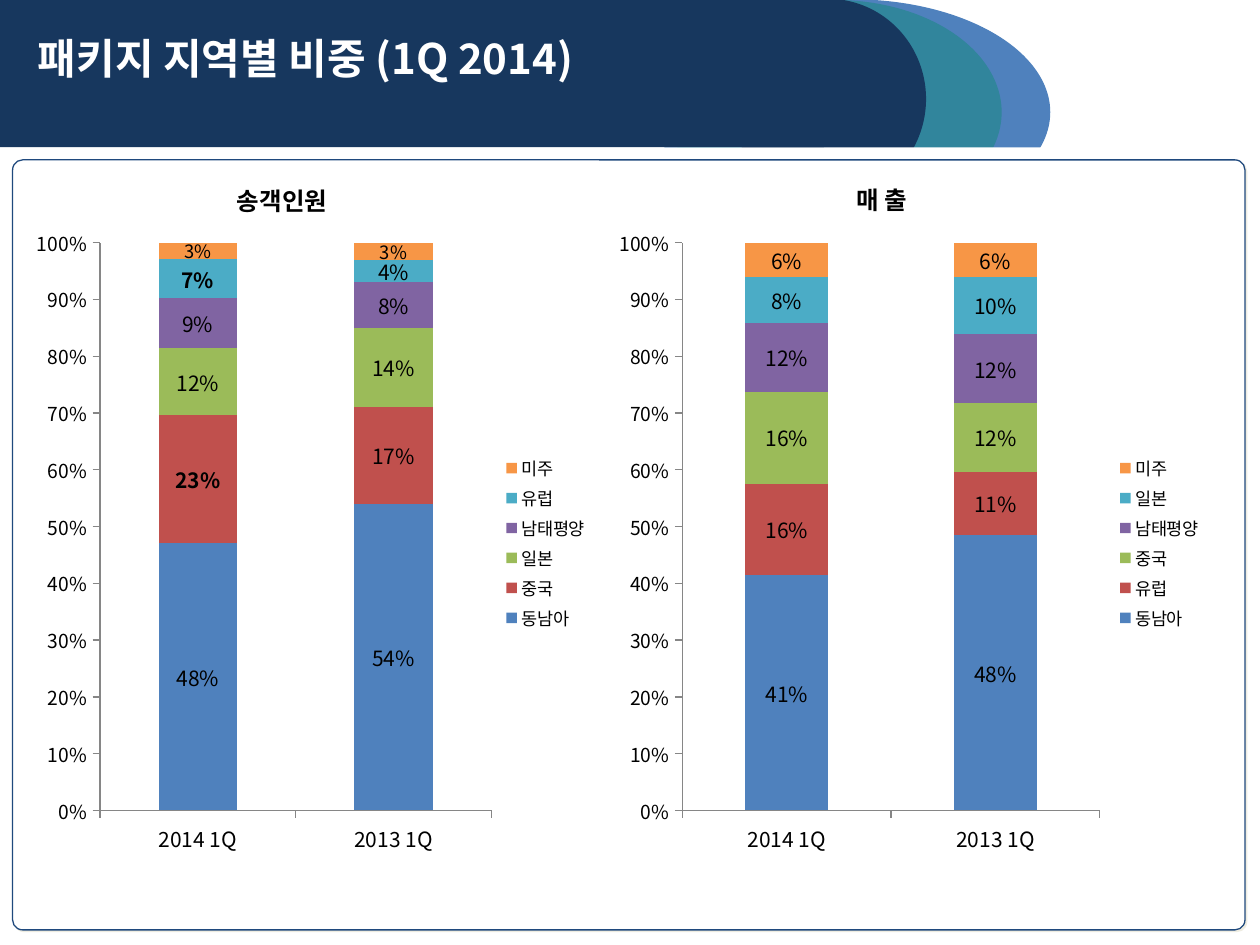
import dataclasses

import lxml.etree
import pptx
import pptx.chart.data
import pptx.dml.color
import pptx.enum.chart
import pptx.enum.shapes
import pptx.enum.text
import pptx.oxml.ns
import pptx.util

Pt = pptx.util.Pt
Kind = pptx.enum.shapes.MSO_SHAPE
Align = pptx.enum.text.PP_ALIGN
Anchor = pptx.enum.text.MSO_ANCHOR
qn = pptx.oxml.ns.qn


@dataclasses.dataclass(frozen=True)
class Theme:
    font: str = "Noto Sans CJK KR"
    heading_font: str = "Arial"
    white: str = "FFFFFF"
    black: str = "000000"
    navy: str = "17375E"
    teal: str = "31859C"
    blue: str = "4F81BD"
    frame: str = "1F497D"
    shadow: str = "EEECE1"
    axis: str = "868686"
    series: tuple = ("4F81BD", "C0504D", "9BBB59", "8064A2", "4BACC6", "F79646")
    title_size: float = 24
    heading_size: float = 14
    label_size: float = 12
    small_label_size: float = 10.5
    value_size: float = 11
    legend_size: float = 10


def rgb(color):
    return pptx.dml.color.RGBColor.from_string(color)


def write_text(box, text, *, font, size, color, align=Align.LEFT, bold=True):
    frame = box.text_frame
    frame.word_wrap = True
    frame.vertical_anchor = Anchor.MIDDLE
    para = frame.paragraphs[0]
    para.alignment = align
    span = para.add_run()
    span.text = text
    span.font.name = font
    span.font.size = Pt(size)
    span.font.bold = bold
    span.font.color.rgb = rgb(color)
    east_asian = lxml.etree.SubElement(span._r.get_or_add_rPr(), qn("a:ea"))
    east_asian.set("typeface", font)


class SlideBuilder:
    def __init__(self, page, theme):
        self.page = page
        self.theme = theme

    def shape(self, kind, bounds, fill, line=None, line_width=0.75):
        shape = self.page.shapes.add_shape(kind, *map(Pt, bounds))
        shape.shadow.inherit = False
        shape.fill.solid()
        shape.fill.fore_color.rgb = rgb(fill)
        if line:
            shape.line.color.rgb = rgb(line)
            shape.line.width = Pt(line_width)
        else:
            shape.line.fill.background()
        return shape

    def panel(self, bounds):
        theme = self.theme
        panel = self.shape(Kind.ROUNDED_RECTANGLE, bounds, theme.white, theme.frame)
        panel.adjustments[0] = 0.013
        effects = panel._element.spPr.find(qn("a:effectLst"))
        shadow = lxml.etree.SubElement(effects, qn("a:outerShdw"))
        shadow.set("dist", str(Pt(1.4)))
        shadow.set("dir", "2700000")
        lxml.etree.SubElement(shadow, qn("a:srgbClr")).set("val", theme.shadow)

    def title(self, text, bounds):
        box = self.page.shapes.title
        box.left, box.top, box.width, box.height = map(Pt, bounds)
        write_text(box, text, font=self.theme.font, size=self.theme.title_size,
                   color=self.theme.white)
        self.page.shapes._spTree.append(box._element)

    def heading(self, text, bounds):
        box = self.page.shapes.add_textbox(*map(Pt, bounds))
        write_text(box, text, font=self.theme.heading_font, size=self.theme.heading_size,
                   color=self.theme.black, align=Align.CENTER)

    def heading_block(self, text, bounds):
        box = self.shape(Kind.RECTANGLE, bounds, self.theme.white, self.theme.white, 2)
        write_text(box, text, font=self.theme.font, size=self.theme.heading_size,
                   color=self.theme.black, align=Align.CENTER)

    def style_font(self, font, size, bold=False):
        font.name = self.theme.font
        font.size = Pt(size)
        font.bold = bold
        font.color.rgb = rgb(self.theme.black)

    def style_axis(self, axis, size):
        axis.has_major_gridlines = False
        axis.major_tick_mark = pptx.enum.chart.XL_TICK_MARK.OUTSIDE
        axis.format.line.color.rgb = rgb(self.theme.axis)
        axis.format.line.width = Pt(0.75)
        self.style_font(axis.tick_labels.font, size)

    def place_plot(self, chart, layout):
        area = chart._chartSpace.chart.plotArea
        for old in area.findall(qn("c:layout")):
            area.remove(old)
        outer = lxml.etree.Element(qn("c:layout"))
        area.insert(0, outer)
        manual = lxml.etree.SubElement(outer, qn("c:manualLayout"))
        settings = {"layoutTarget": "inner", "xMode": "edge", "yMode": "edge"}
        settings.update(zip("xywh", layout))
        for name, value in settings.items():
            lxml.etree.SubElement(manual, qn(f"c:{name}")).set("val", str(value))

    def share_chart(self, bounds, layout, shares, bold_first=(), small=()):
        theme = self.theme
        data = pptx.chart.data.CategoryChartData(number_format="0%")
        data.categories = ["2014 1Q", "2013 1Q"]
        for region, values in shares.items():
            data.add_series(region, values)
        chart = self.page.shapes.add_chart(
            pptx.enum.chart.XL_CHART_TYPE.COLUMN_STACKED_100, *map(Pt, bounds), data).chart
        self.style_font(chart.font, theme.label_size)
        chart.has_title = False
        chart.has_legend = True
        chart.legend.position = pptx.enum.chart.XL_LEGEND_POSITION.RIGHT
        chart.legend.include_in_layout = False
        self.style_font(chart.legend.font, theme.legend_size)
        self.style_axis(chart.category_axis, theme.label_size)
        self.style_axis(chart.value_axis, theme.value_size)
        chart.value_axis.minimum_scale = 0
        chart.value_axis.maximum_scale = 1
        chart.value_axis.major_unit = 0.1
        chart.value_axis.tick_labels.number_format = "0%"
        chart.value_axis.tick_labels.number_format_is_linked = False
        plot = chart.plots[0]
        plot.gap_width = 150
        plot.overlap = 100
        plot.vary_by_categories = False
        for series, color in zip(plot.series, theme.series):
            series.format.fill.solid()
            series.format.fill.fore_color.rgb = rgb(color)
            labels = series.data_labels
            labels.show_value = True
            labels.number_format = "0%"
            labels.number_format_is_linked = False
            size = theme.small_label_size if series.name in small else theme.label_size
            self.style_font(labels.font, size)
            if series.name in bold_first:
                self.style_font(series.points[0].data_label.font, size, bold=True)
        self.place_plot(chart, layout)


def main():
    theme = Theme()
    deck = pptx.Presentation()
    deck.slide_width, deck.slide_height = Pt(720), Pt(540)
    page = deck.slides.add_slide(deck.slide_layouts[5])
    builder = SlideBuilder(page, theme)

    builder.shape(Kind.OVAL, (374.4, 0, 225.4, 128.2), theme.blue, theme.blue)
    builder.shape(Kind.OVAL, (382.3, 0, 190.1, 128.2), theme.teal)
    builder.shape(Kind.OVAL, (416.9, -0.7, 112.3, 114.5), theme.navy)
    builder.shape(Kind.RECTANGLE, (0, 84.2, 720, 67), theme.white)
    builder.shape(Kind.RECTANGLE, (0, 0, 470.9, 84.2), theme.navy)
    builder.panel((7.2, 91.4, 704.2, 440))

    builder.heading("송객인원", (17.3, 102.2, 288, 24.5))
    builder.share_chart(
        (14.4, 123.8, 329, 373), (0.13, 0.04, 0.68, 0.87),
        {"동남아": (0.48, 0.54), "중국": (0.23, 0.17), "일본": (0.12, 0.14),
         "남태평양": (0.09, 0.08), "유럽": (0.07, 0.04), "미주": (0.03, 0.03)},
        bold_first=("중국", "유럽"), small=("미주",))

    builder.heading_block("매 출", (393.8, 100, 220.3, 28))
    builder.share_chart(
        (348.5, 123.8, 345.6, 373), (0.12, 0.04, 0.69, 0.87),
        {"동남아": (0.41, 0.48), "유럽": (0.16, 0.11), "중국": (0.16, 0.12),
         "남태평양": (0.12, 0.12), "일본": (0.08, 0.1), "미주": (0.06, 0.06)})

    builder.title("패키지 지역별 비중 (1Q 2014)", (14.4, 15.1, 504.7, 36))
    deck.save("out.pptx")


if __name__ == "__main__":
    main()
